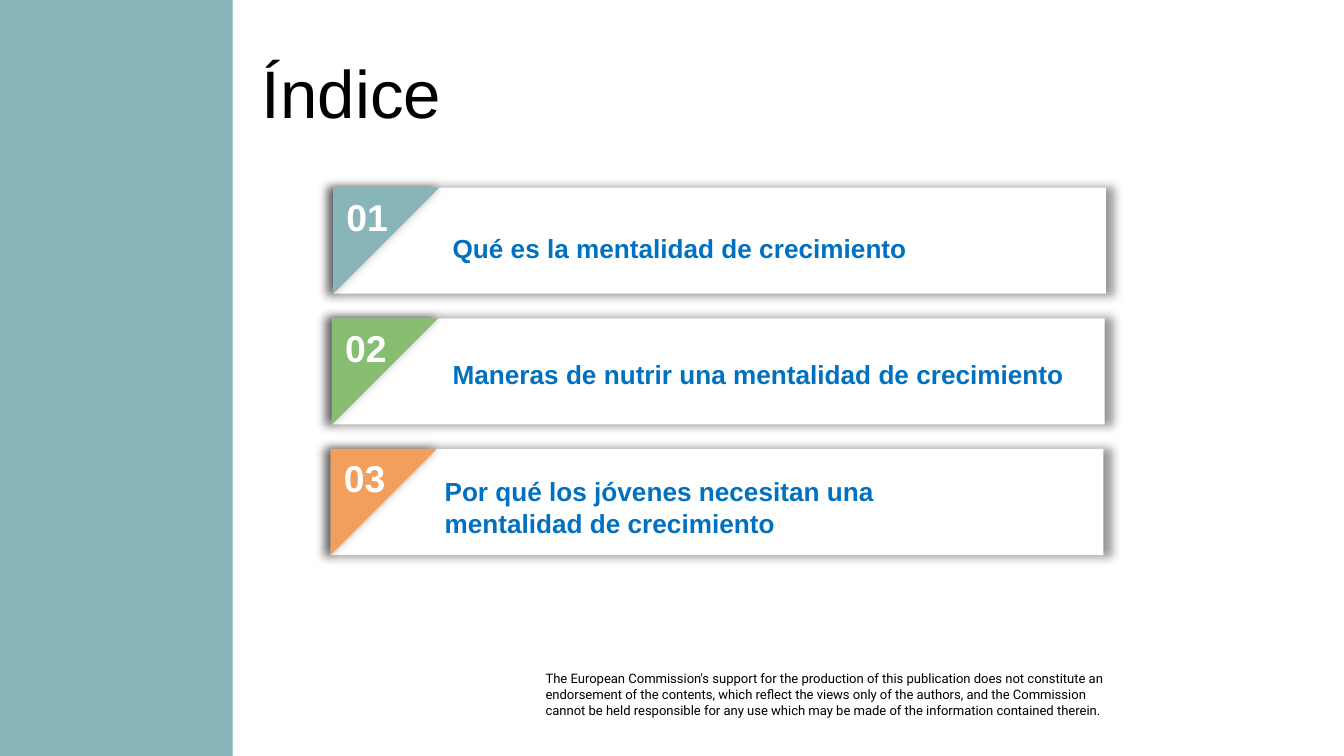
import dataclasses

import pptx
import pptx.dml.color
import pptx.enum.shapes
import pptx.enum.text
import pptx.oxml
import pptx.oxml.ns
import pptx.util

Pt = pptx.util.Pt
Shape = pptx.enum.shapes.MSO_SHAPE
Anchor = pptx.enum.text.MSO_ANCHOR
AutoSize = pptx.enum.text.MSO_AUTO_SIZE


@dataclasses.dataclass(frozen=True)
class Theme:
    """Colours, fonts and type sizes of the deck."""
    teal: str = "87B5BA"
    green: str = "86BD70"
    orange: str = "F39E5A"
    blue: str = "0070C0"
    white: str = "FFFFFF"
    black: str = "000000"
    font: str = "Arial"
    note_font: str = "Roboto"
    title_size: float = 36
    number_size: float = 20
    topic_size: float = 14
    note_size: float = 7


THEME = Theme()
SHADOW = (
    f'<a:outerShdw {pptx.oxml.ns.nsdecls("a")} blurRad="63500" sx="102000" '
    'sy="102000" algn="ctr" rotWithShape="0">'
    f'<a:srgbClr val="{THEME.black}"><a:alpha val="40000"/></a:srgbClr></a:outerShdw>'
)
NOTE = (
    "The European Commission's support for the production of this publication does not "
    "constitute an endorsement of the contents, which reflect the views only of the "
    "authors, and the Commission",
    "cannot be held responsible for any use which may be made of the information "
    "contained therein.",
)
TOPICS = (
    ("Qué es la mentalidad de crecimiento", THEME.teal, (235.4, 121, 345.6, 24.5)),
    ("Maneras de nutrir una mentalidad de crecimiento", THEME.green,
     (235.4, 188.6, 345.6, 24.5)),
    ("Por qué los jóvenes necesitan una mentalidad de crecimiento", THEME.orange,
     (231.1, 251.3, 312.5, 41)),
)
CARD_LEFT, CARD_TOP, CARD_WIDTH, CARD_HEIGHT = 178.5, 100.5, 414, 56.9
CARD_PITCH, CARD_SHIFT = 70, -0.7


def add_block(parent, kind, frame, color):
    """Add a borderless filled shape without a shadow."""
    block = parent.shapes.add_shape(kind, *map(Pt, frame))
    block.shadow.inherit = False
    block.fill.solid()
    block.fill.fore_color.rgb = pptx.dml.color.RGBColor.from_string(color)
    block.line.fill.background()
    return block


def add_shadow(block):
    """Give a block a soft shadow on all sides."""
    effects = block._element.spPr.find(pptx.oxml.ns.qn("a:effectLst"))
    effects.append(pptx.oxml.parse_xml(SHADOW))


def add_text(page, frame, lines, size, color, font=THEME.font, bold=False,
             margins=(7.2, 3.6), anchor=Anchor.TOP, grow=True):
    """Add a wrapping text box with one paragraph per line."""
    box = page.shapes.add_textbox(*map(Pt, frame))
    text = box.text_frame
    text.word_wrap = True
    text.auto_size = AutoSize.SHAPE_TO_FIT_TEXT if grow else AutoSize.NONE
    text.vertical_anchor = anchor
    text.margin_left = text.margin_right = Pt(margins[0])
    text.margin_top = text.margin_bottom = Pt(margins[1])
    text.text = "\n".join(lines)
    for para in text.paragraphs:
        para.font.name = font
        para.font.size = Pt(size)
        para.font.bold = bold
        para.font.color.rgb = pptx.dml.color.RGBColor.from_string(color)


def add_card(page, left, top, color):
    """Add a white card with a coloured corner, grouped."""
    card = page.shapes.add_group_shape()
    panel = add_block(card, Shape.RECTANGLE, (left, top, CARD_WIDTH, CARD_HEIGHT),
                      THEME.white)
    corner = add_block(card, Shape.RIGHT_TRIANGLE,
                       (left, top, CARD_HEIGHT, CARD_HEIGHT), color)
    corner.rotation = 90
    for block in (panel, corner):
        add_shadow(block)


def main():
    """Build the index slide."""
    deck = pptx.Presentation()
    deck.slide_width, deck.slide_height = Pt(720), Pt(405)
    page = deck.slides.add_slide(deck.slide_layouts[6])

    add_text(page, (292.3, 359.3, 300.2, 25.2), NOTE, THEME.note_size, THEME.black,
             font=THEME.note_font, margins=(0, 0))
    add_block(page, Shape.RECTANGLE, (0, 0, 124.6, 405), THEME.teal)
    add_text(page, (133.2, 26.6, 518.4, 45.4), ["Índice"], THEME.title_size,
             THEME.black, anchor=Anchor.MIDDLE, grow=False)

    corners = [(CARD_LEFT + row * CARD_SHIFT, CARD_TOP + row * CARD_PITCH)
               for row in range(len(TOPICS))]
    for (left, top), (_, color, _) in zip(corners, TOPICS):
        add_card(page, left, top, color)
    for number, (left, top) in enumerate(corners, 1):
        add_text(page, (left, top, 41.8, 31.7), [f"{number:02}"], THEME.number_size,
                 THEME.white, bold=True)
    for topic, _, frame in TOPICS:
        add_text(page, frame, [topic], THEME.topic_size, THEME.blue, bold=True)

    deck.save("out.pptx")


if __name__ == "__main__":
    main()
